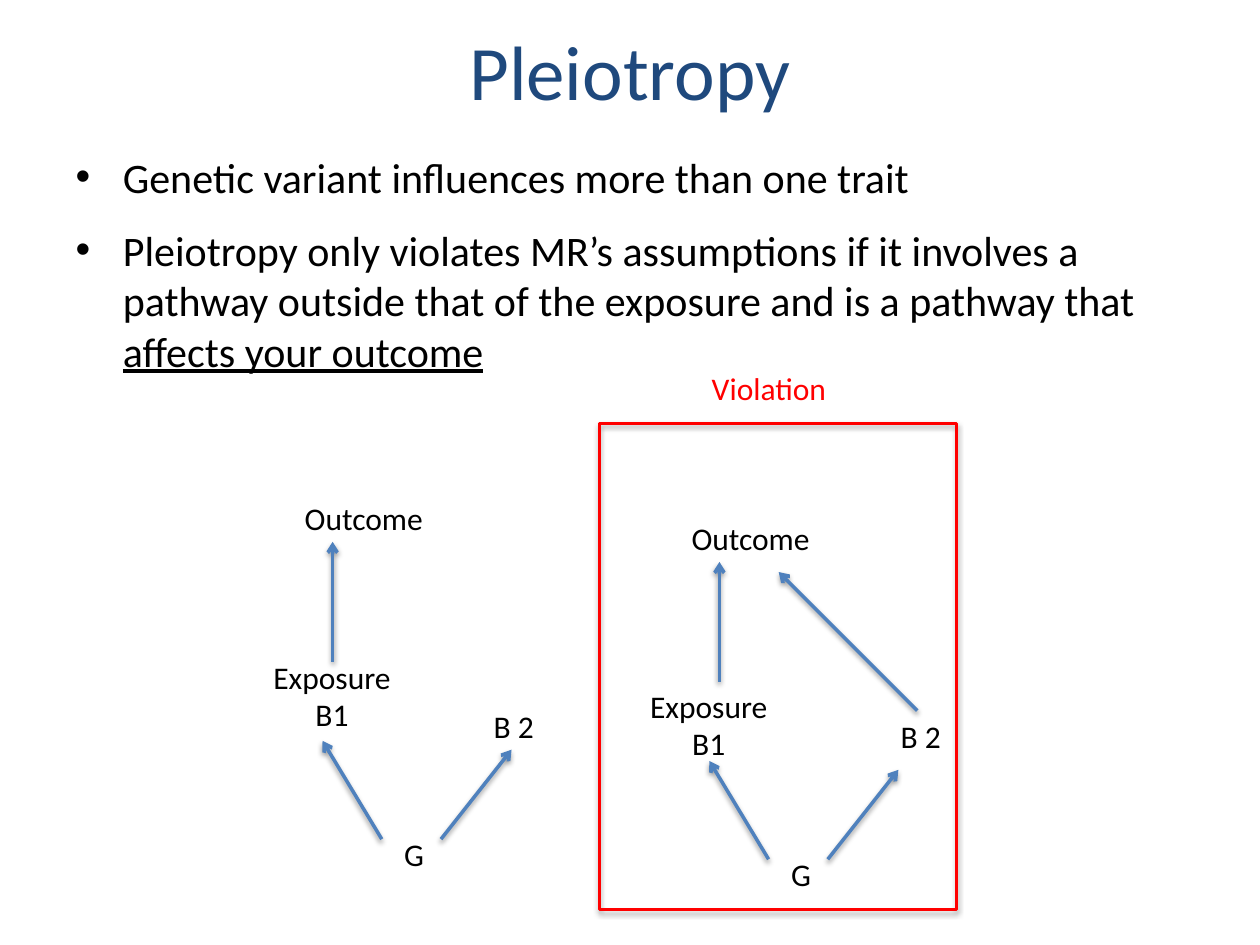
from dataclasses import dataclass

from lxml import etree
from pptx import Presentation
from pptx.dml.color import RGBColor
from pptx.enum.shapes import MSO_CONNECTOR, MSO_SHAPE
from pptx.enum.text import MSO_ANCHOR, MSO_AUTO_SIZE, PP_ALIGN
from pptx.oxml.ns import qn
from pptx.util import Inches, Pt

STRAIGHT = MSO_CONNECTOR.STRAIGHT
RECTANGLE = MSO_SHAPE.RECTANGLE
LEFT, CENTER = PP_ALIGN.LEFT, PP_ALIGN.CENTER
MIDDLE, TOP = MSO_ANCHOR.MIDDLE, MSO_ANCHOR.TOP
NO_FIT, GROW = MSO_AUTO_SIZE.NONE, MSO_AUTO_SIZE.SHAPE_TO_FIT_TEXT
TWO_CONTENT_LAYOUT = 3


@dataclass(frozen=True)
class Theme:
    font: str = "Calibri"
    title_color: str = "1F497D"
    text_color: str = "000000"
    arrow_color: str = "4F81BD"
    violation_color: str = "FF0000"
    title_size: float = 44
    body_size: float = 24
    label_size: float = 18
    arrow_width: float = 2
    frame_width: float = 1.75


THEME = Theme()

# Pathway arrows of the left diagram; the right diagram is shifted
ARROWS = [
    ((3.03, 6.66), (2.56, 5.88)),
    ((3.5, 6.66), (4.06, 5.95)),
    ((2.64, 5.25), (2.64, 4.3)),
]
G_BOX = (3.11, 6.58, 0.36, 0.4)
OUTCOME_BOX = (2.32, 3.91, 1.42, 0.4)
RIGHT_SHIFT = (3.07, 0.16)


def inches(values):
    return [Inches(value) for value in values]


def set_attributes(target, values):
    for name, value in values.items():
        setattr(target, name, value)


def format_run(run, size, color, underline=None):
    set_attributes(run.font, {"name": THEME.font, "size": Pt(size), "underline": underline})
    run.font.color.rgb = RGBColor.from_string(color)


def fill_placeholder(placeholder, box, runs, size, color, anchor):
    """Move a placeholder and fill it with (text, underline) runs."""
    set_attributes(placeholder, dict(zip(("left", "top", "width", "height"), inches(box))))
    frame = placeholder.text_frame
    set_attributes(frame, {"auto_size": NO_FIT, "vertical_anchor": anchor})
    for text, underline in runs:
        run = frame.paragraphs[0].add_run()
        run.text = text
        format_run(run, size, color, underline)


def add_label(slide, box, lines, alignment=LEFT, wrap=True, color=THEME.text_color):
    frame = slide.shapes.add_textbox(*inches(box)).text_frame
    set_attributes(frame, {"word_wrap": wrap, "auto_size": GROW})
    frame.text = "\n".join(lines)
    for paragraph in frame.paragraphs:
        paragraph.alignment = alignment
        format_run(paragraph.runs[0], THEME.label_size, color)


def add_shadow(shape, distance, opacity):
    """Give a shape a soft shadow straight below it."""
    properties = shape._element.spPr
    for old_effects in properties.findall(qn("a:effectLst")):
        properties.remove(old_effects)
    effects = etree.SubElement(properties, qn("a:effectLst"))
    shadow = etree.SubElement(
        effects, qn("a:outerShdw"), blurRad=str(Pt(3.1)), dist=str(Pt(distance)),
        dir="5400000", rotWithShape="0")
    color = etree.SubElement(shadow, qn("a:srgbClr"), val="000000")
    etree.SubElement(color, qn("a:alpha"), val=str(opacity * 1000))


def add_arrow(slide, start, end):
    arrow = slide.shapes.add_connector(STRAIGHT, *inches(start + end))
    arrow.line.width = Pt(THEME.arrow_width)
    arrow.line.color.rgb = RGBColor.from_string(THEME.arrow_color)
    etree.SubElement(arrow.line._get_or_add_ln(), qn("a:tailEnd"), type="arrow")
    add_shadow(arrow, 1.6, 38)


def add_frame(slide, box):
    frame = slide.shapes.add_shape(RECTANGLE, *inches(box))
    frame.shadow.inherit = False
    frame.fill.background()
    frame.line.width = Pt(THEME.frame_width)
    frame.line.color.rgb = RGBColor.from_string(THEME.violation_color)
    add_shadow(frame, 1.8, 35)


def add_diagram(slide, shift, exposure_at, second_trait_at):
    """Draw a variant G that leads to two traits and an outcome."""
    def moved(point):
        return point[0] + shift[0], point[1] + shift[1]

    add_label(slide, moved(G_BOX) + G_BOX[2:], ["G"], wrap=False)
    add_label(slide, exposure_at + (1.57, 0.71), ["Exposure", "B1"], CENTER)
    add_label(slide, second_trait_at + (0.71, 0.4), ["B 2"])
    for start, end in ARROWS:
        add_arrow(slide, moved(start), moved(end))
    add_label(slide, moved(OUTCOME_BOX) + OUTCOME_BOX[2:], ["Outcome"])


def main():
    presentation = Presentation()
    set_attributes(presentation, {"slide_width": Inches(10), "slide_height": Inches(7.5)})
    slide = presentation.slides.add_slide(presentation.slide_layouts[TWO_CONTENT_LAYOUT])
    title, definition, condition = slide.placeholders

    # Title and bullets
    fill_placeholder(title, (0.5, 0.05, 9, 1.01), [("Pleiotropy", None)],
                     THEME.title_size, THEME.title_color, MIDDLE)
    bullets = [
        (definition, (0.5, 1.15, 9, 0.54),
         [("Genetic variant influences more than one trait", None)]),
        (condition, (0.5, 1.73, 9, 1.44),
         [("Pleiotropy only violates MR’s assumptions if it involves a pathway "
           "outside that of the exposure and is a pathway that ", None),
          ("affects your outcome", True)]),
    ]
    for placeholder, box, runs in bullets:
        fill_placeholder(placeholder, box, runs, THEME.body_size, THEME.text_color, TOP)

    # Harmless pathway on the left, violation on the right
    add_diagram(slide, (0, 0), (1.85, 5.17), (3.82, 5.56))
    add_diagram(slide, RIGHT_SHIFT, (4.84, 5.4), (7.05, 5.64))
    add_arrow(slide, (7.28, 5.64), (6.18, 4.54))

    # Violation frame
    add_frame(slide, (4.76, 3.36, 2.83, 3.86))
    add_label(slide, (5.55, 2.88, 1.12, 0.4), ["Violation"], wrap=False,
              color=THEME.violation_color)

    presentation.save("out.pptx")


if __name__ == "__main__":
    main()
